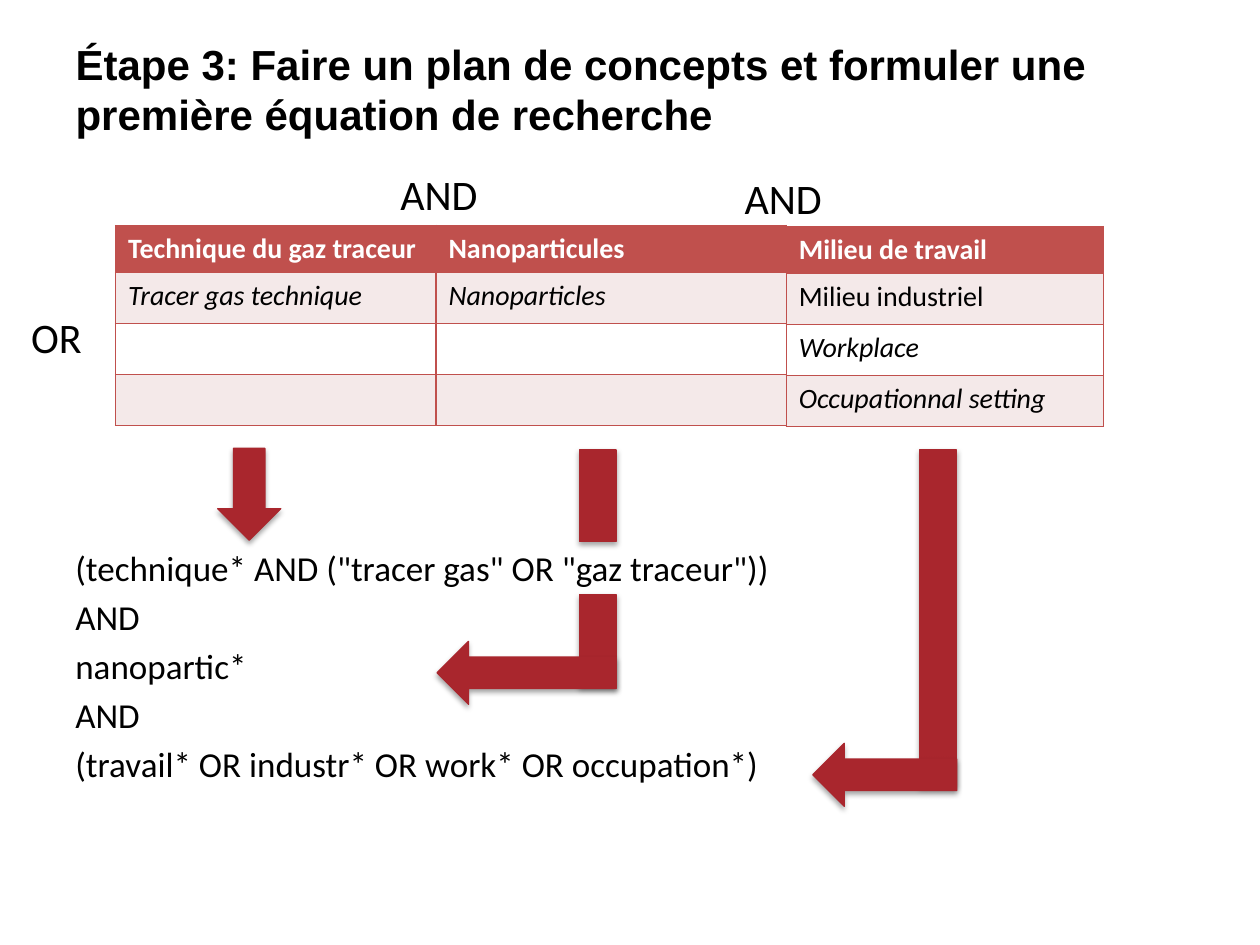
import dataclasses
import itertools

import lxml.etree
import pptx
import pptx.dml.color
import pptx.enum.shapes
import pptx.enum.text
import pptx.oxml.ns
import pptx.util

Cm = pptx.util.Cm
Pt = pptx.util.Pt
Preset = pptx.enum.shapes.MSO_SHAPE
qn = pptx.oxml.ns.qn


@dataclasses.dataclass(frozen=True)
class Theme:
    heading_font: str = "Arial"
    body_font: str = "Calibri"
    ink: str = "000000"
    paper: str = "FFFFFF"
    header: str = "C0504D"
    band: str = "F4E9E9"
    arrow: str = "A9262D"
    large: int = 24
    medium: int = 20
    small: int = 16


class ConceptSlide:
    def __init__(self, deck, theme):
        self.theme = theme
        self.slide = deck.slides.add_slide(deck.slide_layouts[5])

    def color(self, value):
        return pptx.dml.color.RGBColor.from_string(value)

    def style(self, font, size, color=None, **extra):
        formats = {"name": self.theme.body_font, "size": Pt(size), **extra}
        for attribute, value in formats.items():
            setattr(font, attribute, value)
        font.color.rgb = self.color(color or self.theme.ink)

    def fill(self, target, color):
        target.fill.solid()
        target.fill.fore_color.rgb = self.color(color)

    def title(self, wording, left, top, width, height):
        heading = self.slide.shapes.title
        place = {"left": left, "top": top, "width": width, "height": height}
        for attribute, value in place.items():
            setattr(heading, attribute, Cm(value))
        frame = heading.text_frame
        frame.text = wording
        frame.vertical_anchor = pptx.enum.text.MSO_ANCHOR.MIDDLE
        paragraph = frame.paragraphs[0]
        paragraph.alignment = pptx.enum.text.PP_ALIGN.LEFT
        self.style(paragraph.runs[0].font, self.theme.large,
                   name=self.theme.heading_font, bold=True)

    def text(self, lines, left, top, width, height, size, space_before=0):
        box = self.slide.shapes.add_textbox(*map(Cm, (left, top, width, height)))
        frame = box.text_frame
        frame.word_wrap = True
        frame.text = "\n".join(lines)
        for paragraph in frame.paragraphs:
            paragraph.space_before = Pt(space_before)
            self.style(paragraph.runs[0].font, size)

    def block(self, preset, left, top, width, height, rotation=0):
        block = self.slide.shapes.add_shape(preset, *map(Cm, (left, top, width, height)))
        block.rotation = rotation
        self.fill(block, self.theme.arrow)
        block.line.color.rgb = self.color(self.theme.arrow)
        block.line.width = Pt(0.75)
        block.shadow.inherit = False
        effects = block._element.spPr.find(qn("a:effectLst"))
        shadow = lxml.etree.SubElement(
            effects, qn("a:outerShdw"), blurRad=str(Pt(3.1)), dist=str(Pt(1.8)),
            dir="5400000", rotWithShape="0")
        tint = lxml.etree.SubElement(shadow, qn("a:srgbClr"), val=self.theme.ink)
        lxml.etree.SubElement(tint, qn("a:alpha"), val="35000")

    def borders(self, cell):
        properties = cell._tc.get_or_add_tcPr()
        for position, side in enumerate(("a:lnL", "a:lnR", "a:lnT", "a:lnB")):
            edge = properties.makeelement(qn(side), {"w": str(Pt(1))})
            paint = lxml.etree.SubElement(edge, qn("a:solidFill"))
            lxml.etree.SubElement(paint, qn("a:srgbClr"), val=self.theme.header)
            properties.insert(position, edge)

    def concept(self, name, synonyms, left, top, width, header_height, row_height):
        entries = [(name, False), *synonyms]
        heights = [header_height] + [row_height] * len(synonyms)
        table = self.slide.shapes.add_table(
            len(entries), 1, *map(Cm, (left, top, width, sum(heights)))).table
        bands = itertools.cycle((self.theme.band, self.theme.paper))
        fills = itertools.chain([self.theme.header], bands)
        for index, ((term, italic), height, color) in enumerate(zip(entries, heights, fills)):
            table.rows[index].height = Cm(height)
            cell = table.cell(index, 0)
            self.fill(cell, color)
            self.borders(cell)
            if term:
                cell.text = term
                is_header = index == 0
                self.style(cell.text_frame.paragraphs[0].runs[0].font, self.theme.small,
                           self.theme.paper if is_header else self.theme.ink,
                           bold=is_header, italic=italic)


def main():
    deck = pptx.Presentation()
    deck.slide_width, deck.slide_height = Cm(25.4), Cm(19.05)
    theme = Theme()
    page = ConceptSlide(deck, theme)

    page.title("Étape 3: Faire un plan de concepts et formuler une première équation de recherche",
               1.27, 0.2, 22.86, 3.18)

    operators = [("OR", 0.38, 6.15, 1.8), ("AND", 7.82, 3.28, 2.16), ("AND", 14.76, 3.35, 2.16)]
    for operator, left, top, width in operators:
        page.text([operator], left, top, width, 1.27, theme.large)

    query = [
        '(technique* AND ("tracer gas" OR "gaz traceur"))',
        "AND",
        "nanopartic*",
        "AND",
        "(travail* OR industr* OR work* OR occupation*)",
    ]
    page.text(query, 1.27, 10.9, 22.86, 8.15, theme.medium, space_before=4)

    blank = ("", False)
    concepts = [
        ("Technique du gaz traceur", [("Tracer gas technique", True), blank, blank], 4.55, 6.46),
        ("Nanoparticules", [("Nanoparticles", True), blank, blank], 4.55, 7.06),
        ("Milieu de travail", [("Milieu industriel", False), ("Workplace", True),
                               ("Occupationnal setting", True)], 4.57, 6.4),
    ]
    left = 2.33
    for name, synonyms, top, width in concepts:
        page.concept(name, synonyms, left, top, width, 0.94, 1.03)
        left += width

    stem, head = 0.74, 1.27
    page.block(Preset.DOWN_ARROW, 4.39, 9.04, head, 1.85)
    for left, top, height in [(11.68, 9.07, 1.85), (11.68, 11.99, 1.85), (18.54, 9.07, 6.76)]:
        page.block(Preset.RECTANGLE, left, top, stem, height)
    for left, top, length in [(9.98, 11.76, 3.61), (17.2, 14.17, 2.9)]:
        page.block(Preset.DOWN_ARROW, left, top, head, length, rotation=90)

    deck.save("out.pptx")


if __name__ == "__main__":
    main()
